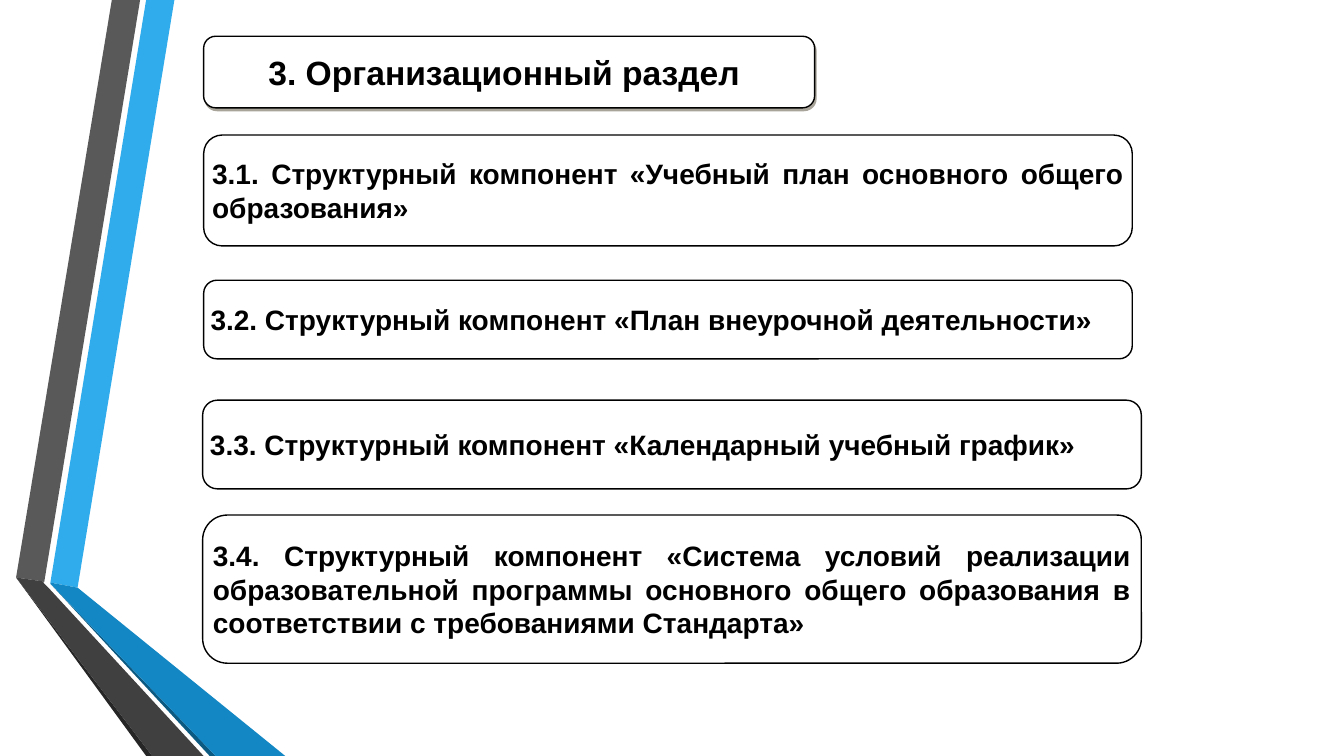
from pptx import Presentation
from pptx.dml.color import RGBColor
from pptx.enum.shapes import MSO_SHAPE
from pptx.enum.text import MSO_ANCHOR, MSO_AUTO_SIZE, PP_ALIGN
from pptx.oxml import parse_xml
from pptx.oxml.ns import nsdecls
from pptx.util import Inches, Pt

COLORS = {
    "sky": "30ACEC", "blue": "1287C3", "navy": "0C5A82",
    "gray": "595959", "dark": "404040", "coal": "262626",
    "black": "000000", "white": "FFFFFF", "shade": "524A37",
}
RIBBONS = [
    ("sky", [(0.5, 5.78), (0.77, 5.83), (1.73, 0), (1.45, 0)]),
    ("gray", [(1.39, 0), (1.11, 0), (0.16, 5.73), (0.44, 5.77)]),
    ("coal", [(0.16, 5.73), (1.45, 7.5), (1.51, 7.5)]),
    ("navy", [(0.5, 5.79), (2.08, 7.5), (2.14, 7.5)]),
    ("blue", [(0.5, 5.79), (2.14, 7.5), (2.83, 7.5), (0.77, 5.83), (0.5, 5.78)]),
    ("dark", [(2.02, 7.5), (0.48, 5.83), (0.43, 5.78), (0.44, 5.77),
              (0.16, 5.73), (1.51, 7.5)]),
]
TITLE = "3. Организационный раздел"
HEAD = (2.02, 0.36, 6.06, 0.71)
PARTS = [
    ((2.02, 1.34, 9.21, 1.1),
     "3.1. Структурный компонент «Учебный план основного общего образования»"),
    ((2.02, 2.78, 9.21, 0.78),
     "3.2. Структурный компонент «План внеурочной деятельности»"),
    ((2.01, 3.97, 9.31, 0.88),
     "3.3. Структурный компонент «Календарный учебный график»"),
    ((2.01, 5.11, 9.31, 1.47),
     "3.4. Структурный компонент «Система условий реализации образовательной "
     "программы основного общего образования в соответствии с требованиями Стандарта»"),
]


def color(name):
    return RGBColor.from_string(COLORS[name])


def write(shape, text, size=20, align=PP_ALIGN.JUSTIFY, left=0.03, right=0.03):
    frame = shape.text_frame
    frame.word_wrap = True
    frame.auto_size = MSO_AUTO_SIZE.NONE
    frame.vertical_anchor = MSO_ANCHOR.MIDDLE
    frame.margin_left, frame.margin_right = Inches(left), Inches(right)
    frame.margin_top = frame.margin_bottom = Inches(0.03)
    para = frame.paragraphs[0]
    para.alignment = align
    para.line_spacing = 1.0
    para.space_before = Pt(0)
    run = para.add_run()
    run.text = text
    font = run.font
    font.name, font.size, font.bold = "Arial", Pt(size), True
    font.color.rgb = color("black")


def ribbon(slide, fill, points):
    start, *rest = [(Inches(x), Inches(y)) for x, y in points]
    path = slide.shapes.build_freeform(*start)
    path.add_line_segments(rest, close=True)
    shape = path.convert_to_shape()
    shape.shadow.inherit = False
    shape.fill.solid()
    shape.fill.fore_color.rgb = color(fill)
    shape.line.fill.background()


def frame_box(slide, place):
    box = slide.shapes.add_shape(MSO_SHAPE.ROUNDED_RECTANGLE, *map(Inches, place))
    box.shadow.inherit = False
    box.fill.solid()
    box.fill.fore_color.rgb = color("white")
    box.line.color.rgb = color("black")
    box.line.width = Pt(1)
    return box


def cast_shadow(box):
    props = box._element.spPr
    props.remove(props.find("{*}effectLst"))
    props.append(parse_xml(
        f'<a:effectLst {nsdecls("a")}>'
        f'<a:outerShdw dist="{Pt(2.2)}" dir="{63 * 60000}" algn="ctr" rotWithShape="0">'
        f'<a:srgbClr val="{COLORS["shade"]}"><a:alpha val="50000"/></a:srgbClr>'
        '</a:outerShdw></a:effectLst>'))


def main():
    deck = Presentation()
    deck.slide_width, deck.slide_height = Inches(13.33), Inches(7.5)
    slide = deck.slides.add_slide(deck.slide_layouts[5])
    for fill, points in RIBBONS:
        ribbon(slide, fill, points)

    cast_shadow(frame_box(slide, HEAD))
    title = slide.shapes.title
    title.left, title.top, title.width, title.height = map(Inches, HEAD)
    write(title, TITLE, size=24, align=PP_ALIGN.CENTER, left=0, right=0.1)
    slide.shapes._spTree.append(title._element)  # bring the title above its frame

    for place, text in PARTS:
        write(frame_box(slide, place), text)
    deck.save("out.pptx")


if __name__ == "__main__":
    main()
